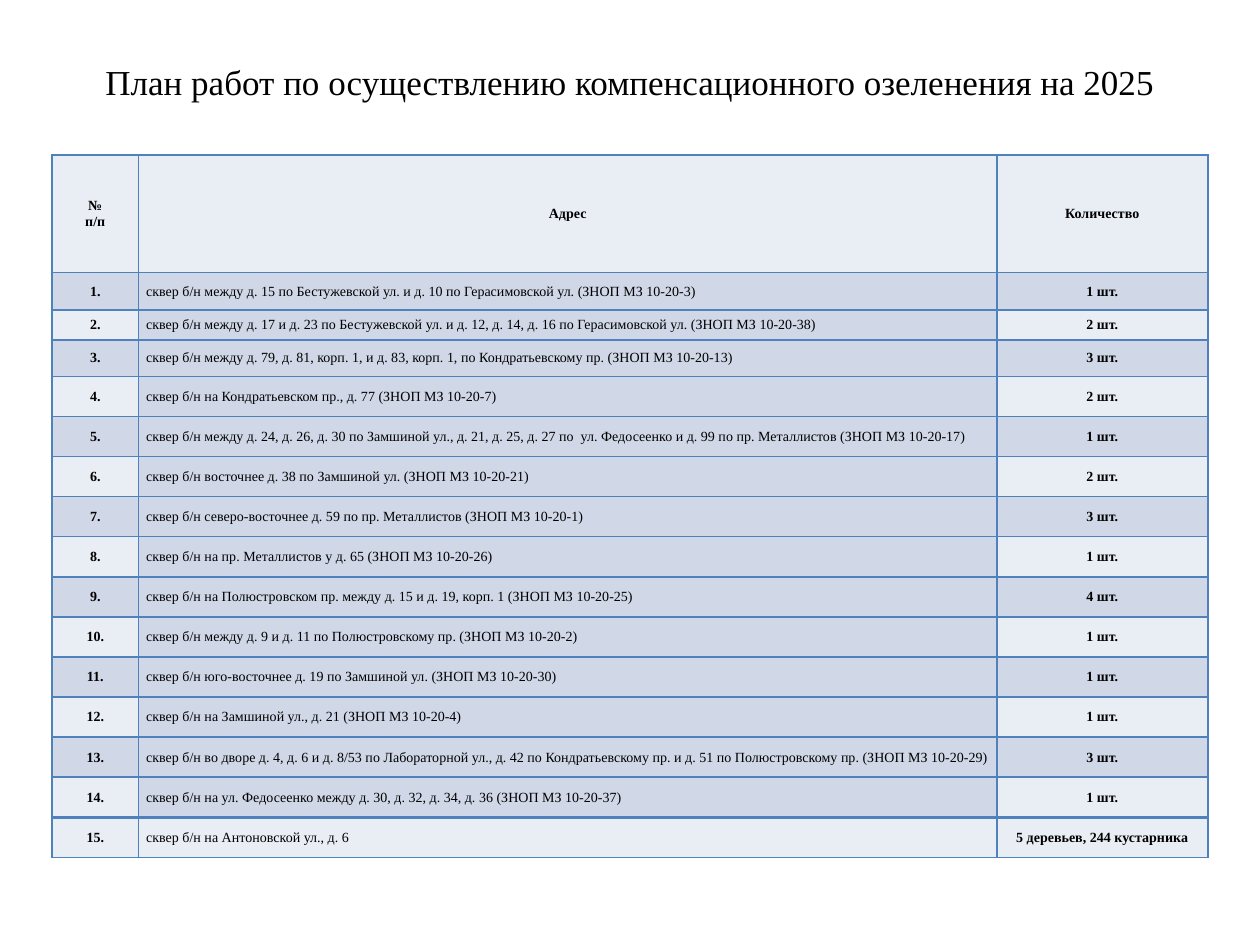
from lxml.etree import SubElement
from pptx import Presentation
from pptx.dml.color import RGBColor
from pptx.enum.text import MSO_ANCHOR, PP_ALIGN
from pptx.oxml.ns import qn
from pptx.util import Pt

TITLE = "План работ по осуществлению компенсационного озеленения на 2025"
HEADINGS = ("№\nп/п", "Адрес", "Количество")
SITES = [
    ("сквер б/н между д. 15 по Бестужевской ул. и д. 10 по Герасимовской ул. (ЗНОП МЗ 10-20-3)", "1 шт."),
    ("сквер б/н между д. 17 и д. 23 по Бестужевской ул. и д. 12, д. 14, д. 16 по Герасимовской ул. (ЗНОП МЗ 10-20-38)", "2 шт."),
    ("сквер б/н между д. 79, д. 81, корп. 1, и д. 83, корп. 1, по Кондратьевскому пр. (ЗНОП МЗ 10-20-13)", "3 шт."),
    ("сквер б/н на Кондратьевском пр., д. 77 (ЗНОП МЗ 10-20-7)", "2 шт."),
    ("сквер б/н между д. 24, д. 26, д. 30 по Замшиной ул., д. 21, д. 25, д. 27 по  ул. Федосеенко и д. 99 по пр. Металлистов (ЗНОП МЗ 10-20-17)", "1 шт."),
    ("сквер б/н восточнее д. 38 по Замшиной ул. (ЗНОП МЗ 10-20-21)", "2 шт."),
    ("сквер б/н северо-восточнее д. 59 по пр. Металлистов (ЗНОП МЗ 10-20-1)", "3 шт."),
    ("сквер б/н на пр. Металлистов у д. 65 (ЗНОП МЗ 10-20-26)", "1 шт."),
    ("сквер б/н на Полюстровском пр. между д. 15 и д. 19, корп. 1 (ЗНОП МЗ 10-20-25)", "4 шт."),
    ("сквер б/н между д. 9 и д. 11 по Полюстровскому пр. (ЗНОП МЗ 10-20-2)", "1 шт."),
    ("сквер б/н юго-восточнее д. 19 по Замшиной ул. (ЗНОП МЗ 10-20-30)", "1 шт."),
    ("сквер б/н на Замшиной ул., д. 21 (ЗНОП МЗ 10-20-4)", "1 шт."),
    ("cквер б/н во дворе д. 4, д. 6 и д. 8/53 по Лабораторной ул., д. 42 по Кондратьевскому пр. и д. 51 по Полюстровскому пр. (ЗНОП МЗ 10-20-29)", "3 шт."),
    ("сквер б/н на ул. Федосеенко между д. 30, д. 32, д. 34, д. 36 (ЗНОП МЗ 10-20-37)", "1 шт."),
    ("сквер б/н на Антоновской ул., д. 6", "5 деревьев, 244 кустарника"),
]
THEME = {
    "font": "Times New Roman", "title_size": 20, "table_size": 8,
    "text": "000000", "border": "4F81BD", "light": "E9EDF4", "dark": "D0D8E8",
}
COLUMN_WIDTHS = (49.5, 490.5, 120.5)
ROW_HEIGHTS = [67.1, 21.4, 17.1, 20.9] + [22.93] * (len(SITES) - 3)
ADDRESS = 1


def style_text(paragraph, size, bold, align):
    paragraph.alignment = align
    font = paragraph.font
    font.name, font.size, font.bold = THEME["font"], Pt(size), bold
    font.color.rgb = RGBColor.from_string(THEME["text"])


def set_borders(cell, top_width):
    properties = cell._tc.get_or_add_tcPr()
    for side, width in (("L", 1), ("R", 1), ("T", top_width), ("B", 1)):
        border = SubElement(properties, qn(f"a:ln{side}"), w=str(Pt(width)))
        fill = SubElement(border, qn("a:solidFill"))
        SubElement(fill, qn("a:srgbClr"), val=THEME["border"])


def add_title(slide, slide_width):
    title = slide.shapes.add_textbox(0, Pt(31), slide_width, Pt(37.5)).text_frame
    title.word_wrap = True
    title.text = TITLE
    style_text(title.paragraphs[0], THEME["title_size"], False, PP_ALIGN.CENTER)


def add_plan(slide):
    rows = [HEADINGS] + [(f"{n}.", *site) for n, site in enumerate(SITES, 1)]
    last = len(rows) - 1
    plan = slide.shapes.add_table(
        len(rows), len(HEADINGS), Pt(29.7), Pt(88.6),
        Pt(sum(COLUMN_WIDTHS)), Pt(sum(ROW_HEIGHTS)),
    ).table
    for column, width in zip(plan.columns, COLUMN_WIDTHS):
        column.width = Pt(width)
    for r, (values, height) in enumerate(zip(rows, ROW_HEIGHTS)):
        plan.rows[r].height = Pt(height)
        for c, value in enumerate(values):
            cell = plan.cell(r, c)
            cell.text = value
            cell.vertical_anchor = MSO_ANCHOR.MIDDLE
            cell.margin_left = cell.margin_right = Pt(4.3)
            cell.margin_top = cell.margin_bottom = 0
            set_borders(cell, 2 if r == last else 1)
            shaded = 0 < r < last and (r % 2 == 1 or c == ADDRESS)
            cell.fill.solid()
            cell.fill.fore_color.rgb = RGBColor.from_string(THEME["dark" if shaded else "light"])
            is_address = r > 0 and c == ADDRESS
            align = PP_ALIGN.JUSTIFY if is_address else PP_ALIGN.CENTER
            for paragraph in cell.text_frame.paragraphs:
                style_text(paragraph, THEME["table_size"], not is_address, align)


def main():
    deck = Presentation()
    deck.slide_width, deck.slide_height = Pt(720), Pt(540)
    slide = deck.slides.add_slide(deck.slide_layouts[6])
    add_title(slide, deck.slide_width)
    add_plan(slide)
    deck.save("out.pptx")


if __name__ == "__main__":
    main()
